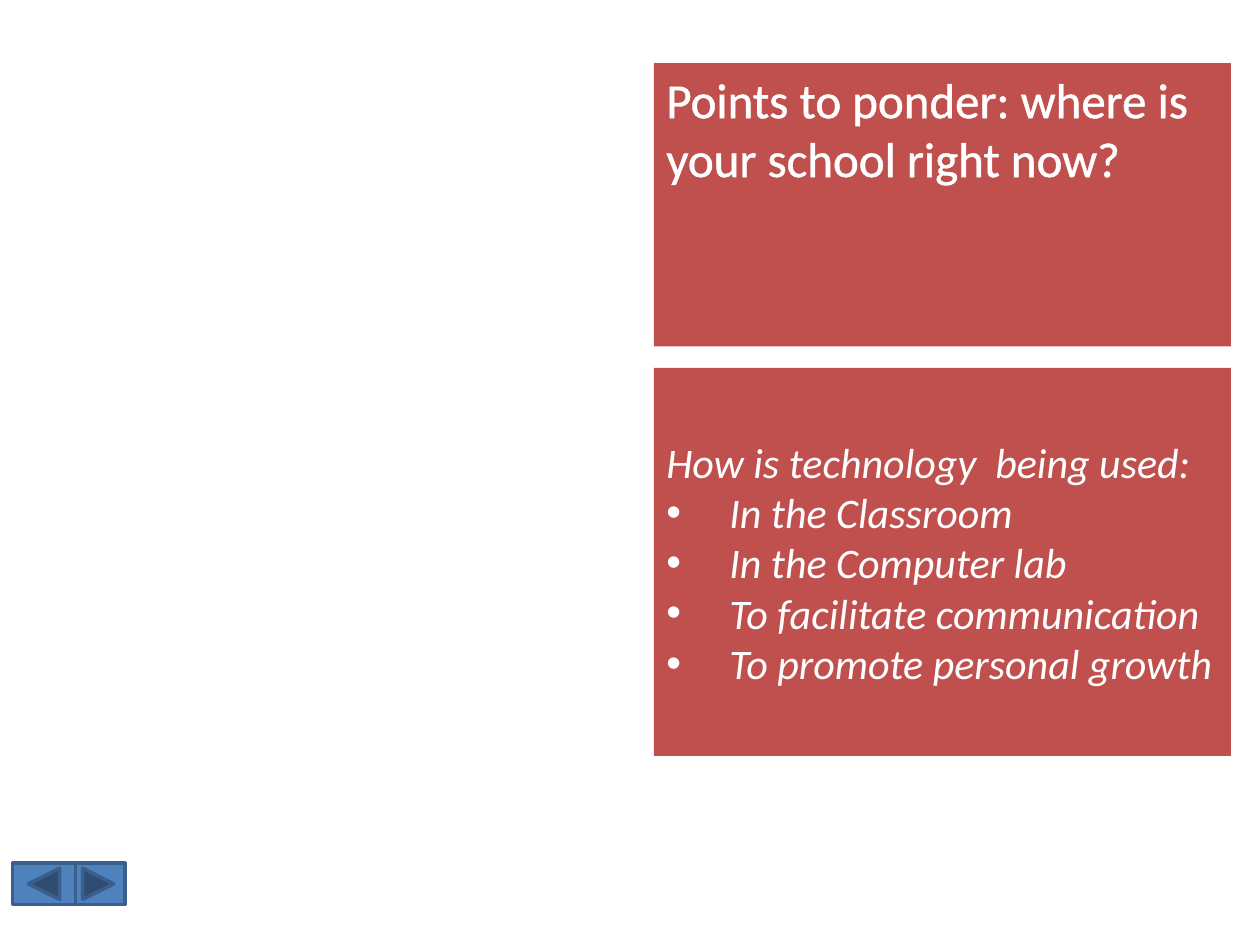
from lxml import etree
from pptx import Presentation
from pptx.dml.color import RGBColor
from pptx.enum import shapes, text
from pptx.oxml.ns import qn
from pptx.util import Inches, Pt

WHITE = RGBColor(0xFF, 0xFF, 0xFF)
RED = RGBColor(0xC0, 0x50, 0x4D)
BLUE = RGBColor(0x4F, 0x81, 0xBD)
DARK_BLUE = RGBColor(0x3A, 0x5F, 0x8C)

presentation = Presentation()
presentation.slide_width = Inches(10)
presentation.slide_height = Inches(7.5)
slide = presentation.slides.add_slide(presentation.slide_layouts[6])


def add_filled_shape(preset, left, top, width, height, color):
    shape = slide.shapes.add_shape(
        preset, Inches(left), Inches(top), Inches(width), Inches(height))
    shape.shadow.inherit = False
    shape.fill.solid()
    shape.fill.fore_color.rgb = color
    return shape


def add_panel(top, height, lines, size, anchor, italic=False):
    """Add a red panel; every line after the first is a bullet."""
    panel = add_filled_shape(
        shapes.MSO_SHAPE.RECTANGLE, 5.19, top, 4.58, height, RED)
    panel.line.fill.background()
    frame = panel.text_frame
    frame.word_wrap = True
    frame.vertical_anchor = anchor
    frame.text = "\n".join(lines)
    for index, paragraph in enumerate(frame.paragraphs):
        paragraph.alignment = text.PP_ALIGN.LEFT
        if index:
            properties = paragraph._p.get_or_add_pPr()
            properties.set("marL", str(Inches(0.5)))
            properties.set("indent", str(-Inches(0.5)))
            etree.SubElement(properties, qn("a:buFont"), typeface="Arial")
            etree.SubElement(properties, qn("a:buChar"), char="•")
        font = paragraph.runs[0].font
        font.name = "Calibri"
        font.size = Pt(size)
        font.italic = italic
        font.color.rgb = WHITE
    return panel


question_panel = add_panel(
    0.5, 2.25, ["Points to ponder: where is your school right now?"],
    28, text.MSO_ANCHOR.TOP)
run_properties = question_panel.text_frame.paragraphs[0].runs[0].font._element
outline = etree.Element(qn("a:ln"), w=str(Pt(1.45)))
outline_fill = etree.SubElement(outline, qn("a:solidFill"))
etree.SubElement(outline_fill, qn("a:srgbClr"), val=str(WHITE))
run_properties.insert(0, outline)

add_panel(
    2.92, 3.08,
    ["How is technology  being used:",
     "In the Classroom",
     "In the Computer lab",
     "To facilitate communication",
     "To promote personal growth"],
    24, text.MSO_ANCHOR.MIDDLE, italic=True)

for preset, left, width in (
    (shapes.MSO_SHAPE.ACTION_BUTTON_FORWARD_OR_NEXT, 0.57, 0.42),
    (shapes.MSO_SHAPE.ACTION_BUTTON_BACK_OR_PREVIOUS, 0.1, 0.5),
):
    button = add_filled_shape(preset, left, 6.85, width, 0.33, BLUE)
    button.line.color.rgb = DARK_BLUE
    button.line.width = Pt(2)

presentation.save("out.pptx")
